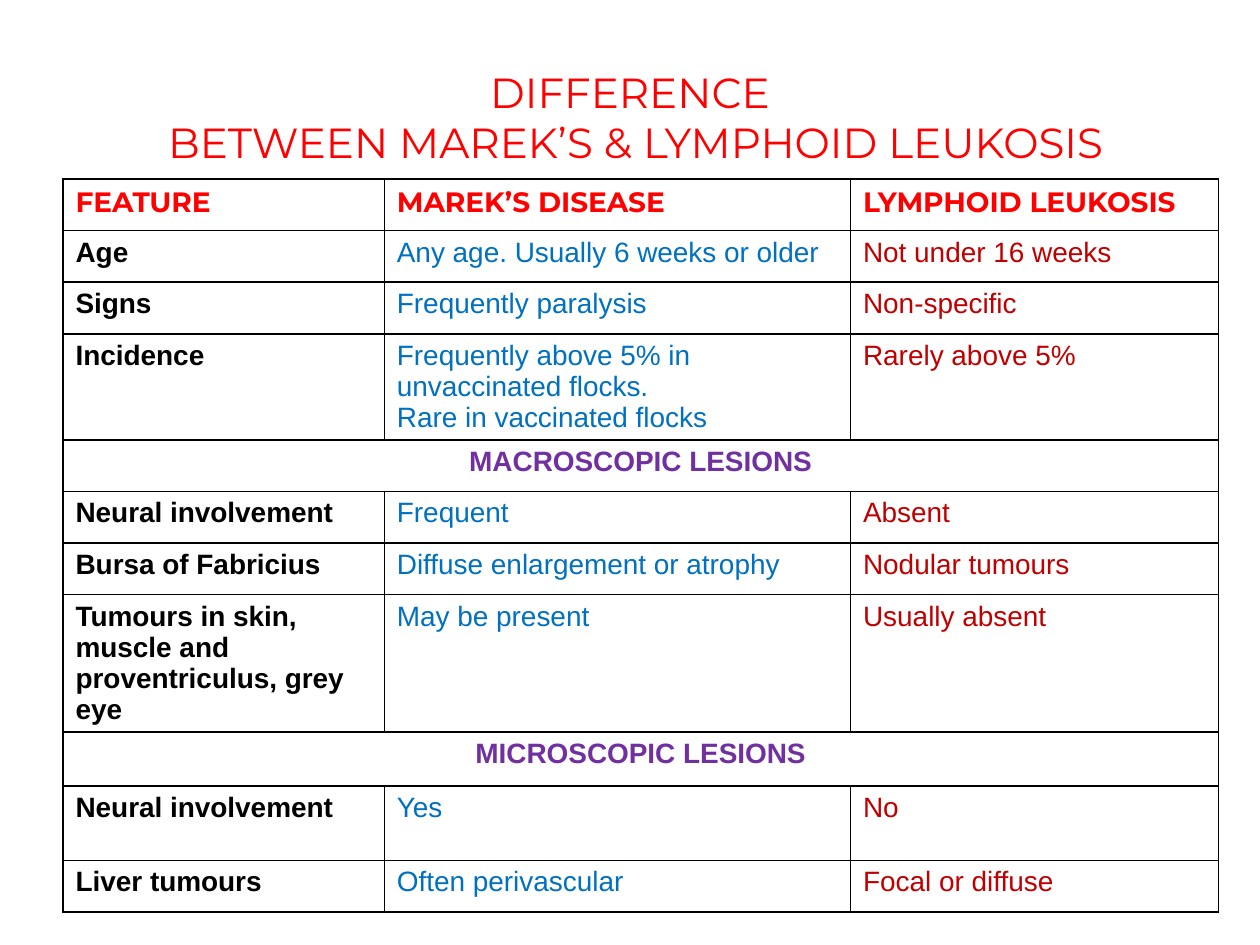
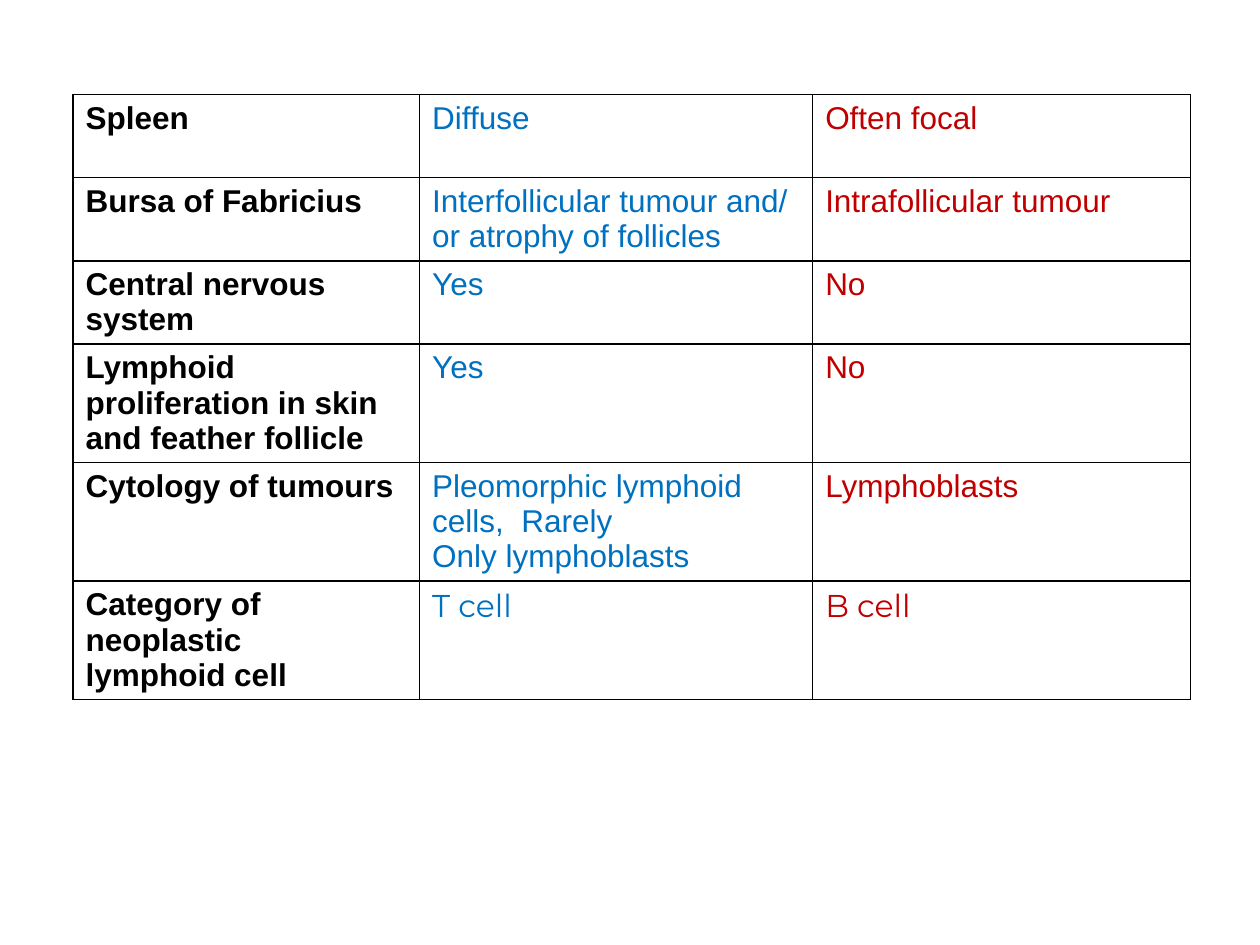
from lxml.etree import SubElement
from pptx import Presentation
from pptx.dml.color import RGBColor
from pptx.enum.text import MSO_ANCHOR, MSO_AUTO_SIZE, PP_ALIGN
from pptx.oxml.ns import qn
from pptx.util import Inches, Pt

COLORS = {
    "title": "FF0000",
    "feature": "000000",
    "marek": "0070C0",
    "leukosis": "C00000",
    "section": "7030A0",
    "border": "000000",
}
COLUMNS = ("feature", "marek", "leukosis")
HEAD = "Montserrat"
BODY = "Arial"


def add_run(para, text, size, font, color, bold=False):
    run = para.add_run()
    run.text = text
    run.font.size = Pt(size)
    run.font.name = font
    run.font.bold = bold
    run.font.color.rgb = RGBColor.from_string(COLORS[color])


def add_grid(slide, left, top, widths, heights, rows, size, special):
    """Add a bordered table; a one-item row spans all columns.

    special maps a row index to the (font, color) of its Montserrat cells;
    a color of None keeps the color of the column.
    """
    frame = slide.shapes.add_table(
        len(rows), len(widths), Inches(left), Inches(top),
        Inches(sum(widths)), Inches(sum(heights)))
    table = frame.table
    table.first_row = table.horz_banding = False
    for col, width in zip(table.columns, widths):
        col.width = Inches(width)
    for line, height in zip(table.rows, heights):
        line.height = Inches(height)

    for r, texts in enumerate(rows):
        section = len(texts) == 1
        if section:
            table.cell(r, 0).merge(table.cell(r, len(widths) - 1))
        for c, name in enumerate(COLUMNS):
            cell = table.cell(r, c)
            props = cell._tc.get_or_add_tcPr()
            for side in ("lnL", "lnR", "lnT", "lnB"):
                edge = SubElement(props, qn(f"a:{side}"), w=str(Pt(1)))
                fill = SubElement(edge, qn("a:solidFill"))
                SubElement(fill, qn("a:srgbClr"), val=COLORS["border"])
            cell.fill.background()
            if c >= len(texts):
                continue
            font, color = special.get((r, c), (BODY, None))
            color = color or ("section" if section else name)
            bold = c == 0 or color == "title"
            for i, text in enumerate(texts[c].split("\n")):
                frame = cell.text_frame
                para = frame.add_paragraph() if i else frame.paragraphs[0]
                para.alignment = PP_ALIGN.CENTER if section else PP_ALIGN.LEFT
                add_run(para, text, size, font, color, bold)


deck = Presentation()
deck.slide_width = Inches(10)
deck.slide_height = Inches(7.5)

# Slide 1: features and lesions
slide = deck.slides.add_slide(deck.slide_layouts[5])
title = slide.shapes.title
title.left, title.top = Inches(0.5), Inches(0.3)
title.width, title.height = Inches(9), Inches(1.25)
frame = title.text_frame
frame.word_wrap = True
frame.auto_size = MSO_AUTO_SIZE.NONE
frame.vertical_anchor = MSO_ANCHOR.MIDDLE
para = frame.paragraphs[0]
para.alignment = PP_ALIGN.CENTER
add_run(para, "DIFFERENCE", 24, HEAD, "title")
para.add_line_break()
add_run(para, " BETWEEN MAREK’S & LYMPHOID LEUKOSIS", 24, HEAD, "title")

rows = [
    ("FEATURE", "MAREK’S DISEASE", "LYMPHOID LEUKOSIS"),
    ("Age", "Any age. Usually 6 weeks or older", "Not under 16 weeks"),
    ("Signs", "Frequently paralysis", "Non-specific"),
    ("Incidence",
     "Frequently above 5% in unvaccinated flocks.\nRare in vaccinated flocks",
     "Rarely above 5%"),
    ("MACROSCOPIC LESIONS",),
    ("Neural involvement", "Frequent", "Absent"),
    ("Bursa of Fabricius", "Diffuse enlargement or atrophy",
     "Nodular tumours"),
    ("Tumours in skin, muscle and proventriculus, grey eye",
     "May be present", "Usually absent"),
    ("MICROSCOPIC LESIONS",),
    ("Neural involvement", "Yes", "No"),
    ("Liver tumours", "Often perivascular", "Focal or diffuse"),
]
heights = [0.41] * len(rows)
heights[3], heights[7], heights[8], heights[9] = 0.83, 1.08, 0.43, 0.59
add_grid(slide, 0.5, 1.42, (2.55, 3.7, 2.92), heights, rows, 16,
         {(0, c): (HEAD, "title") for c in range(3)})

# Slide 2: microscopic lesions, continued
slide = deck.slides.add_slide(deck.slide_layouts[6])
rows = [
    ("Spleen", "Diffuse", "Often focal"),
    ("Bursa of Fabricius",
     "Interfollicular tumour and/\nor atrophy of follicles",
     "Intrafollicular tumour"),
    ("Central nervous system", "Yes", "No"),
    ("Lymphoid proliferation in skin and feather follicle", "Yes", "No"),
    ("Cytology of tumours",
     "Pleomorphic lymphoid cells,  Rarely\nOnly lymphoblasts",
     "Lymphoblasts"),
    ("Category of neoplastic\nlymphoid cell", "T cell", "B cell"),
]
add_grid(slide, 0.58, 0.75, (2.75, 3.12, 3), [0.66] * 3 + [0.94] * 3, rows, 18,
         {(5, c): (HEAD, None) for c in (1, 2)})

deck.save("out.pptx")
